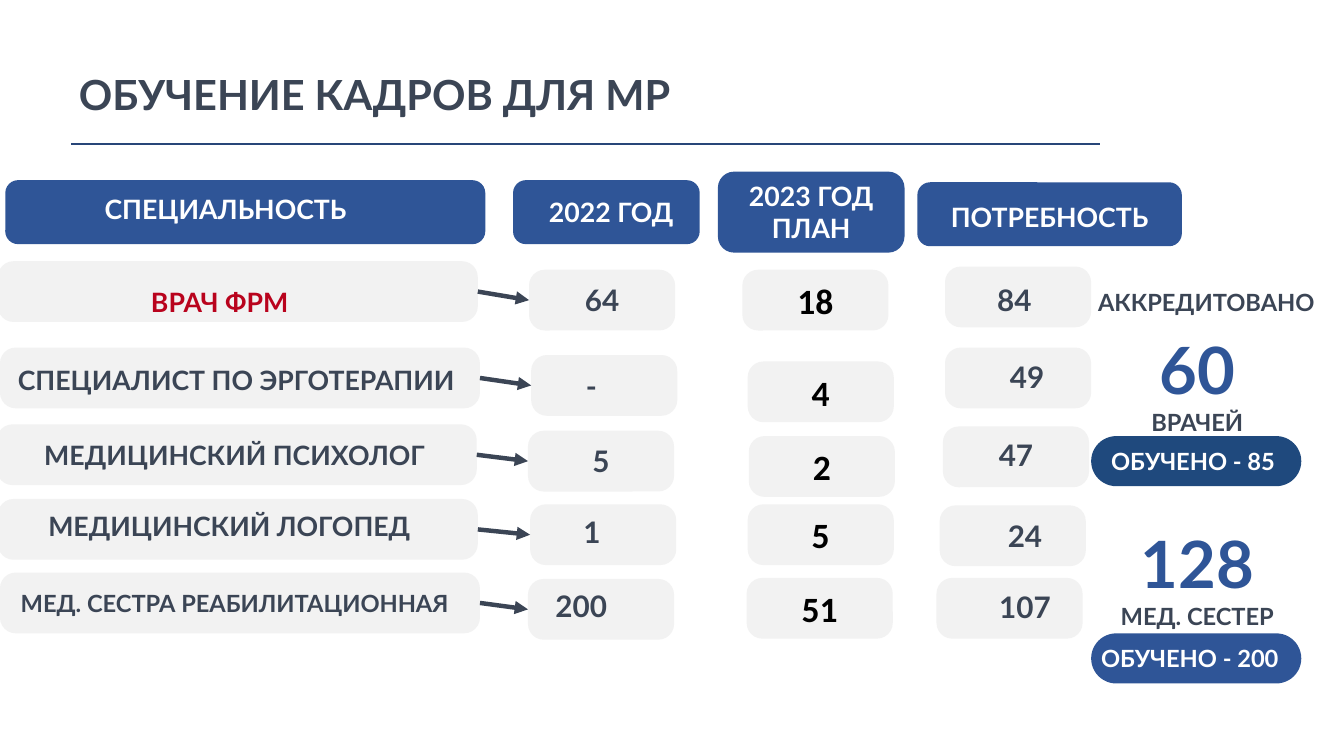
from lxml import etree
from pptx import Presentation
from pptx.dml.color import RGBColor
from pptx.enum.shapes import MSO_CONNECTOR, MSO_SHAPE
from pptx.enum.text import MSO_ANCHOR, PP_ALIGN
from pptx.oxml.ns import qn
from pptx.util import Inches, Pt

ROUNDED = MSO_SHAPE.ROUNDED_RECTANGLE
STRAIGHT = MSO_CONNECTOR.STRAIGHT
CENTER, LEFT = PP_ALIGN.CENTER, PP_ALIGN.LEFT
MIDDLE = MSO_ANCHOR.MIDDLE
LEFT_SIDE, RIGHT_SIDE = 1, 3

BLUE = RGBColor(0x2F, 0x55, 0x97)
NAVY = RGBColor(0x1F, 0x49, 0x7D)
RULE = RGBColor(0x28, 0x46, 0x78)
SLATE = RGBColor(0x3B, 0x45, 0x55)
RED = RGBColor(0xB9, 0x03, 0x1D)
GRAY = RGBColor(0xF2, 0xF2, 0xF2)
WHITE = RGBColor(0xFF, 0xFF, 0xFF)
BLACK = RGBColor(0x00, 0x00, 0x00)

COLS, ROWS = 126, 70.9
CELL = 0.1
NAME_W, VALUE_W, BAR_H = 45, 13.7, 5.7
BADGE_X, BADGE_W, BADGE_H = 102.3, 19.7, 4.7

HEADERS = [
    (0.5, 16.9, 45, 6, ["СПЕЦИАЛЬНОСТЬ"], (-1.85, -0.3)),
    (48.1, 16.9, 17.5, 6, ["2022 ГОД"], (0.45, 0)),
    (67.3, 16.1, 17.5, 7.6, ["2023 ГОД", "ПЛАН"], (0, 0)),
    (86, 17.1, 24.8, 6, ["ПОТРЕБНОСТЬ"], (0, 0.2)),
]
SPECIALTIES = [
    (-0.2, 24.5, "ВРАЧ ФРМ", (-1.7, 0.95), 18, RED),
    (0, 32.6, "СПЕЦИАЛИСТ ПО ЭРГОТЕРАПИИ", (-0.35, 0.15), 18, SLATE),
    (-0.3, 39.8, "МЕДИЦИНСКИЙ ПСИХОЛОГ", (-0.2, 0), 18, SLATE),
    (-0.2, 46.8, "МЕДИЦИНСКИЙ ЛОГОПЕД", (-0.8, -0.35), 18, SLATE),
    (0, 53.7, "МЕД. СЕСТРА РЕАБИЛИТАЦИОННАЯ", (-0.5, 0), 16, SLATE),
]
TRAINED_2022 = [
    (49.6, 25.3, "64", (0, 0)),
    (49.8, 33.3, "-", (-1.2, 0)),
    (49.5, 40.4, "5", (0, 0)),
    (49.7, 47.3, "1", (-1.05, -0.25)),
    (49.5, 54.3, "200", (-1.85, -0.35)),
]
PLAN_2023 = [
    (69.6, 25.3, "18"),
    (70.1, 33.9, "4"),
    (70.2, 40.9, "2"),
    (70.1, 47.3, "5"),
    (70, 54.2, "51"),
]
DEMAND = [
    (88.6, 25, "84", (-0.35, 0.25)),
    (88.6, 32.6, "49", (0.85, -0.15)),
    (88.4, 40, "47", (0, -0.25)),
    (88.1, 47.4, "24", (1.15, 0)),
    (87.8, 54.2, "107", (1.45, -0.15)),
]
TOTALS = [(30.2, "60", "ВРАЧЕЙ"), (48.4, "128", "МЕД. СЕСТЕР")]
BADGES = [
    (40.9, "ОБУЧЕНО - 85", NAVY, (-0.3, 0)),
    (59.4, "ОБУЧЕНО - 200", BLUE, (-0.6, 0)),
]


def grid(n):
    return Inches(n * CELL)


class Board:
    def __init__(self, prs):
        self.slide = prs.slides.add_slide(prs.slide_layouts[5])
        self.shapes = self.slide.shapes
        self.style = {"name": "Lato", "bold": True}

    def put_text(self, sp, lines, align=CENTER, nudge=(0, 0)):
        tf = sp.text_frame
        dx, dy = nudge
        frame = {
            "word_wrap": True,
            "vertical_anchor": MIDDLE,
            "margin_left": grid(max(0, 2 * dx)),
            "margin_right": grid(max(0, -2 * dx)),
            "margin_top": grid(max(0, 2 * dy)),
            "margin_bottom": grid(max(0, -2 * dy)),
        }
        for key, value in frame.items():
            setattr(tf, key, value)
        for i, (text, size, color, extra) in enumerate(lines):
            p = tf.add_paragraph() if i else tf.paragraphs[0]
            p.alignment = align
            r = p.add_run()
            r.text = text
            for key, value in {**self.style, "size": Pt(size), **extra}.items():
                setattr(r.font, key, value)
            r.font.color.rgb = color

    def title(self, x, y, w, h, text):
        sp = self.shapes.title
        box = {"left": x, "top": y, "width": w, "height": h}
        for key, value in box.items():
            setattr(sp, key, grid(value))
        self.put_text(sp, [(text, 28, SLATE, {})], LEFT)

    def bar(self, x, y, w, h, fill, radius, lines, nudge=(0, 0)):
        sp = self.shapes.add_shape(ROUNDED, grid(x), grid(y), grid(w), grid(h))
        sp.adjustments[0] = radius
        sp.shadow.inherit = False
        sp.fill.solid()
        sp.fill.fore_color.rgb = fill
        sp.line.fill.background()
        self.put_text(sp, lines, nudge=nudge)
        return sp

    def value(self, x, y, text, nudge=(0, 0), size=20, color=SLATE, w=VALUE_W, **extra):
        lines = [(text, size, color, extra)]
        return self.bar(x, y, w, BAR_H, GRAY, 0.26, lines, nudge)

    def label(self, x, y, w, h, lines):
        sp = self.shapes.add_textbox(grid(x), grid(y), grid(w), grid(h))
        self.put_text(sp, lines)

    def line(self, x1, y1, x2, y2, color, width):
        c = self.shapes.add_connector(STRAIGHT, grid(x1), grid(y1), grid(x2), grid(y2))
        c.line.color.rgb = color
        c.line.width = Pt(width)
        etree.SubElement(c._element.spPr, qn("a:effectLst"))
        return c

    def arrow(self, source, target):
        c = self.line(0, 0, 1, 1, SLATE, 3)
        c.begin_connect(source, RIGHT_SIDE)
        c.end_connect(target, LEFT_SIDE)
        etree.SubElement(c.get_or_add_ln(), qn("a:tailEnd"), type="triangle")


def main():
    prs = Presentation()
    prs.slide_width, prs.slide_height = grid(COLS), grid(ROWS)
    board = Board(prs)
    board.title(7.4, 6, 113.9, 5.7, "ОБУЧЕНИЕ КАДРОВ ДЛЯ МР")
    board.line(6.7, 13.5, 103.1, 13.5, RULE, 1)

    for x, y, w, h, texts, nudge in HEADERS:
        lines = [(text, 18, WHITE, {}) for text in texts]
        board.bar(x, y, w, h, BLUE, 0.2, lines, nudge)

    for specialty, trained in zip(SPECIALTIES, TRAINED_2022):
        board.arrow(board.value(*specialty, w=NAME_W), board.value(*trained))
    for plan in PLAN_2023:
        board.value(*plan, size=24, color=BLACK, name="Calibri")
    for demand in DEMAND:
        board.value(*demand)

    board.label(100.6, 26.5, 25, 3.7, [("АККРЕДИТОВАНО", 16, SLATE, {})])
    for y, count, staff in TOTALS:
        board.label(98.5, y, 27.5, 11.4, [(count, 44, BLUE, {}), (staff, 16, SLATE, {})])
    for y, text, fill, nudge in BADGES:
        lines = [(text, 16, WHITE, {})]
        board.bar(BADGE_X, y, BADGE_W, BADGE_H, fill, 0.5, lines, nudge)

    prs.save("out.pptx")


if __name__ == "__main__":
    main()
